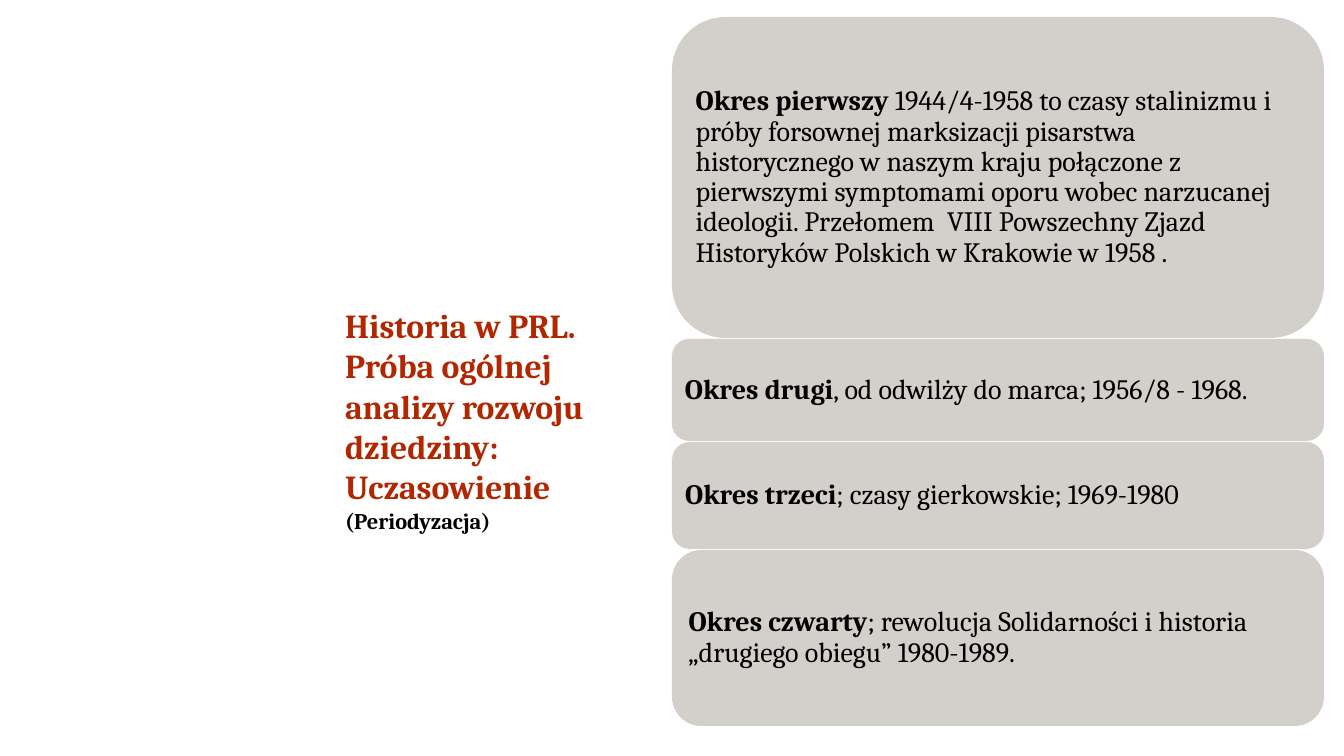
from dataclasses import dataclass

from pptx import Presentation
from pptx.dml.color import RGBColor
from pptx.enum.shapes import MSO_SHAPE as Shape
from pptx.enum.text import MSO_ANCHOR as Anchor, MSO_AUTO_SIZE as AutoSize, PP_ALIGN as Align
from pptx.util import Emu, Pt

SCALE = 12192000 / 1344
FONT = "Cambria"
BLACK, RED, GREY = "000000", "B22600", "D3D0CB"
CARD_LEFT, CARD_TOP, CARD_WIDTH, CARD_GAP = 672, 17, 652, 1


@dataclass
class Period:
    """One period of the timeline, shown as a rounded card."""
    name: str
    text: str
    height: int


PERIODS = [
    Period("Okres pierwszy ",
           "1944/4-1958 to czasy stalinizmu i próby forsownej marksizacji pisarstwa "
           "historycznego w naszym kraju połączone z pierwszymi symptomami oporu wobec "
           "narzucanej ideologii. Przełomem  VIII Powszechny Zjazd Historyków Polskich "
           "w Krakowie w 1958 .", 321),
    Period("Okres drugi", ", od odwilży do marca; 1956/8 - 1968.", 102),
    Period("Okres trzeci", "; czasy gierkowskie; 1969-1980", 107),
    Period("Okres czwarty",
           "; rewolucja Solidarności i historia „drugiego obiegu” 1980-1989.", 176),
]


def px(n: int) -> Emu:
    """Turn pixels into EMU."""
    return Emu(round(n * SCALE))


def rgb(value: str) -> RGBColor:
    """Turn a hex string into a colour."""
    return RGBColor.from_string(value)


def add_text(p, text: str, size: int = 20, color: str = BLACK, bold: bool = False) -> None:
    """Append a formatted run to a paragraph."""
    r = p.add_run()
    r.text = text
    r.font.name, r.font.size, r.font.bold = FONT, Pt(size), bold
    r.font.color.rgb = rgb(color)


def add_title(s) -> None:
    """Fill and place the title placeholder."""
    sp = s.shapes.title
    sp.left, sp.top, sp.width, sp.height = px(335), px(300), px(317), px(241)
    tf = sp.text_frame
    tf.word_wrap, tf.auto_size, tf.vertical_anchor = True, AutoSize.NONE, Anchor.TOP
    p = tf.paragraphs[0]
    p.alignment = Align.LEFT
    for line in ("Historia w PRL.", "Próba ogólnej analizy rozwoju dziedziny: Uczasowienie"):
        add_text(p, line, size=24, color=RED, bold=True)
        p.add_line_break()
    add_text(p, "(Periodyzacja)", size=16, bold=True)


def add_card(s, period: Period, top: int) -> None:
    """Draw one period card."""
    sp = s.shapes.add_shape(Shape.ROUNDED_RECTANGLE, px(CARD_LEFT), px(top),
                            px(CARD_WIDTH), px(period.height))
    sp.shadow.inherit = False
    sp.fill.solid()
    sp.fill.fore_color.rgb = rgb(GREY)
    sp.line.fill.background()
    tf = sp.text_frame
    tf.word_wrap, tf.vertical_anchor = True, Anchor.MIDDLE
    tf.margin_left = tf.margin_right = tf.margin_top = tf.margin_bottom = px(8)
    p = tf.paragraphs[0]
    p.alignment, p.line_spacing = Align.LEFT, 0.9
    add_text(p, period.name, bold=True)
    add_text(p, period.text)


def main() -> None:
    """Build and save the slide."""
    prs = Presentation()
    prs.slide_width, prs.slide_height = px(1344), px(756)
    s = prs.slides.add_slide(prs.slide_layouts[5])
    add_title(s)
    top = CARD_TOP
    for period in PERIODS:
        add_card(s, period, top)
        top += period.height + CARD_GAP
    prs.save("out.pptx")


if __name__ == "__main__":
    main()
